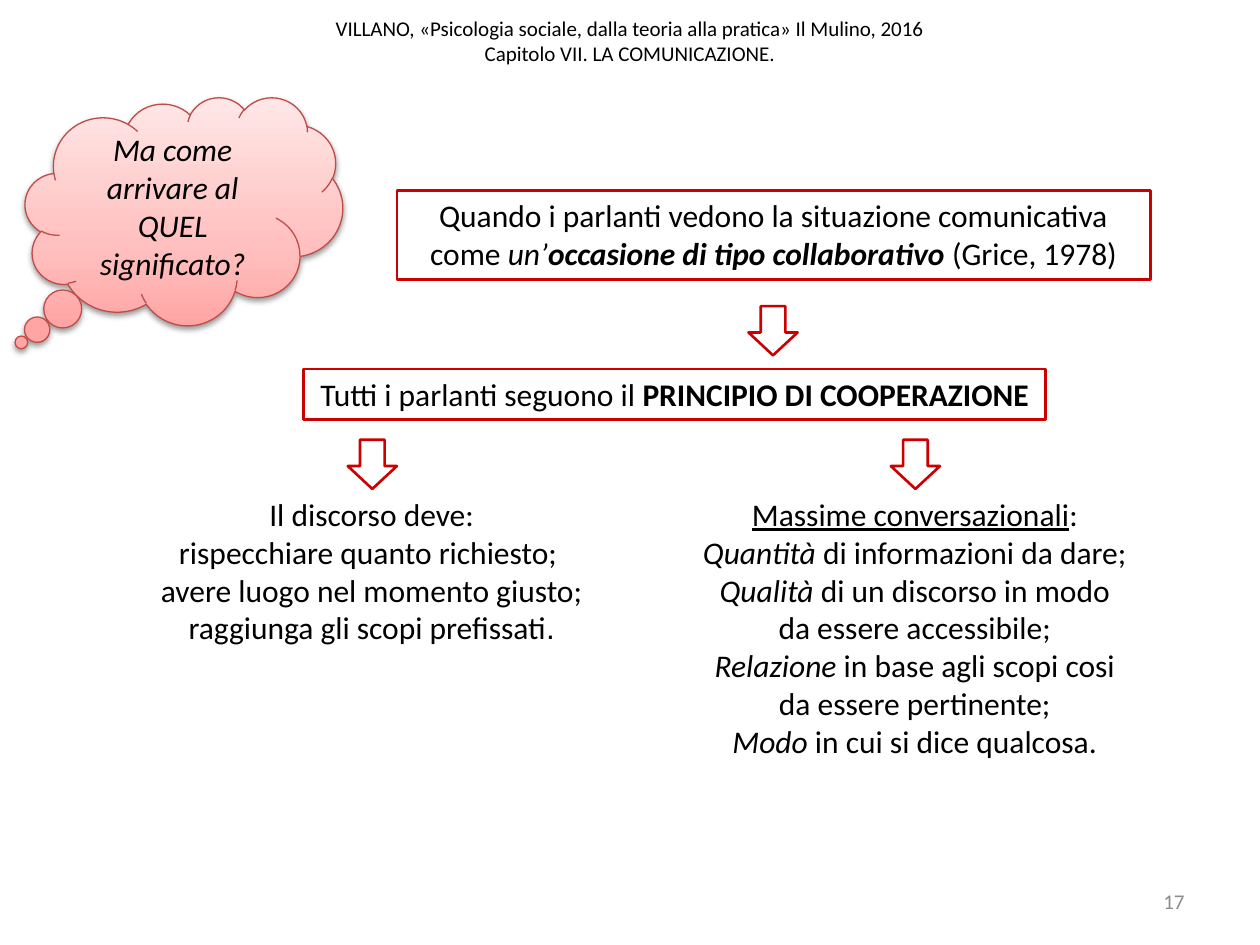
from dataclasses import dataclass

from lxml.etree import SubElement
from pptx import Presentation
from pptx.dml.color import RGBColor
from pptx.enum.shapes import MSO_SHAPE
from pptx.enum.text import MSO_ANCHOR, MSO_AUTO_SIZE, PP_ALIGN
from pptx.oxml.ns import qn
from pptx.util import Inches, Pt


@dataclass(frozen=True)
class Theme:
    font: str = "Calibri"
    full_stop_font: str = "Arial"
    body: float = 18
    small: float = 12
    ink: str = "000000"
    muted: str = "8C8C8C"
    red: str = "CC0000"
    cloud_line: str = "BF4C48"
    cloud_stops: tuple = ((0, "FFA6A5"), (35, "FFC0BF"), (100, "FFE7E7"))
    border: float = 1.5
    cloud_border: float = 0.75


@dataclass(frozen=True)
class Span:
    text: str
    bold: bool = False
    italic: bool = False
    underline: bool = False
    font: str = ""
    break_before: bool = False


@dataclass(frozen=True)
class Area:
    left: float
    top: float
    width: float
    height: float

    def lengths(self) -> tuple:
        return tuple(Inches(v) for v in (self.left, self.top, self.width, self.height))


@dataclass(frozen=True)
class Passage:
    area: Area
    paragraphs: tuple
    framed: bool = False
    wrap: bool = True
    grow: bool = True
    middle: bool = False
    align: PP_ALIGN = PP_ALIGN.CENTER
    size: float = Theme.body
    color: str = Theme.ink


THEME = Theme()
ARROW_SIDE = 0.39

HEADER = Passage(
    Area(0, -0.11, 10, 0.87),
    ((Span("VILLANO, «Psicologia sociale, dalla teoria alla pratica» Il Mulino, 2016"),
      Span("Capitolo VII. LA COMUNICAZIONE.", break_before=True)),),
    grow=False, middle=True, size=THEME.small)
PAGE_NUMBER = Passage(
    Area(7.17, 6.95, 2.33, 0.4), ((Span("17"),),),
    grow=False, middle=True, align=PP_ALIGN.RIGHT, size=THEME.small, color=THEME.muted)
QUESTION = Passage(
    Area(0.2, 0.77, 2.52, 1.81),
    ((Span("Ma come arrivare al QUEL significato?", italic=True),),),
    grow=False, middle=True)
PREMISE = Passage(
    Area(3.15, 1.51, 5.98, 0.71),
    ((Span("Quando i parlanti vedono la situazione comunicativa come "),
      Span("un’", italic=True),
      Span("occasione di tipo collaborativo ", bold=True, italic=True),
      Span("(Grice, 1978)")),),
    framed=True)
PRINCIPLE = Passage(
    Area(2.41, 2.93, 5.89, 0.4),
    ((Span("Tutti i parlanti seguono il "), Span("PRINCIPIO DI COOPERAZIONE", bold=True)),),
    framed=True, wrap=False)
DISCOURSE = Passage(
    Area(1.16, 3.88, 3.58, 1.31),
    ((Span("Il discorso deve:"),),
     (Span("rispecchiare quanto richiesto; "),),
     (Span("avere luogo nel momento giusto;"),),
     (Span("raggiunga gli scopi prefissati"), Span(".", font=THEME.full_stop_font))))
MAXIMS = Passage(
    Area(5.47, 3.88, 3.58, 2.22),
    ((Span("Massime conversazionali", underline=True), Span(":")),
     (Span("Quantità", italic=True), Span(" di informazioni da dare;")),
     (Span("Qualità", italic=True), Span(" di un discorso in modo da essere accessibile;")),
     (Span("Relazione", italic=True), Span(" in base agli scopi cosi da essere pertinente;")),
     (Span("Modo", italic=True), Span(" in cui si dice qualcosa."))))
ARROW_CORNERS = ((5.94, 2.43), (7.07, 3.49), (2.76, 3.49))


def write(shape, passage: Passage) -> None:
    frame = shape.text_frame
    frame.word_wrap = passage.wrap
    frame.auto_size = MSO_AUTO_SIZE.SHAPE_TO_FIT_TEXT if passage.grow else MSO_AUTO_SIZE.NONE
    frame.vertical_anchor = MSO_ANCHOR.MIDDLE if passage.middle else MSO_ANCHOR.TOP
    for index, spans in enumerate(passage.paragraphs):
        paragraph = frame.add_paragraph() if index else frame.paragraphs[0]
        paragraph.alignment = passage.align
        paragraph.font.size = Pt(passage.size)
        for span in spans:
            if span.break_before:
                paragraph.add_line_break()
            run = paragraph.add_run()
            run.text = span.text
            font = run.font
            font.name = span.font or THEME.font
            font.size = Pt(passage.size)
            font.color.rgb = RGBColor.from_string(passage.color)
            font.bold, font.italic, font.underline = span.bold, span.italic, span.underline


def add_outlined(slide, kind: MSO_SHAPE, area: Area, color: str, width: float):
    shape = slide.shapes.add_shape(kind, *area.lengths())
    shape.shadow.inherit = False
    shape.fill.background()
    shape.line.color.rgb = RGBColor.from_string(color)
    shape.line.width = Pt(width)
    return shape


def add_passage(slide, passage: Passage) -> None:
    if passage.framed:
        shape = add_outlined(slide, MSO_SHAPE.RECTANGLE, passage.area, THEME.red, THEME.border)
    else:
        shape = slide.shapes.add_textbox(*passage.area.lengths())
    write(shape, passage)


def add_arrow(slide, left: float, top: float) -> None:
    area = Area(left, top, ARROW_SIDE, ARROW_SIDE)
    arrow = add_outlined(slide, MSO_SHAPE.DOWN_ARROW, area, THEME.red, THEME.border)
    arrow.adjustments[0] = 0.5
    arrow.adjustments[1] = 0.465


def add_cloud(slide, passage: Passage) -> None:
    cloud = add_outlined(slide, MSO_SHAPE.CLOUD_CALLOUT, passage.area,
                         THEME.cloud_line, THEME.cloud_border)
    cloud.adjustments[0] = -0.512
    cloud.adjustments[1] = 0.576
    cloud.fill.gradient()
    cloud.fill.gradient_angle = 90
    properties = cloud.element.spPr
    stops = properties.find(".//" + qn("a:gsLst"))
    for stop in list(stops):
        stops.remove(stop)
    for position, color in THEME.cloud_stops:
        stop = SubElement(stops, qn("a:gs"), pos=str(position * 1000))
        SubElement(stop, qn("a:srgbClr"), val=color)
    shadow = SubElement(properties.find(qn("a:effectLst")), qn("a:outerShdw"),
                        blurRad=str(Pt(3.1)), dist=str(Pt(1.6)), dir="5400000", rotWithShape="0")
    shade = SubElement(shadow, qn("a:srgbClr"), val=THEME.ink)
    SubElement(shade, qn("a:alpha"), val="38000")
    write(cloud, passage)


def main() -> None:
    deck = Presentation()
    deck.slide_width, deck.slide_height = Inches(10), Inches(7.5)
    slide = deck.slides.add_slide(deck.slide_layouts[6])
    add_passage(slide, HEADER)
    add_passage(slide, PAGE_NUMBER)
    add_cloud(slide, QUESTION)
    for passage in (PREMISE, PRINCIPLE):
        add_passage(slide, passage)
    for left, top in ARROW_CORNERS:
        add_arrow(slide, left, top)
    for passage in (DISCOURSE, MAXIMS):
        add_passage(slide, passage)
    deck.save("out.pptx")


if __name__ == "__main__":
    main()
